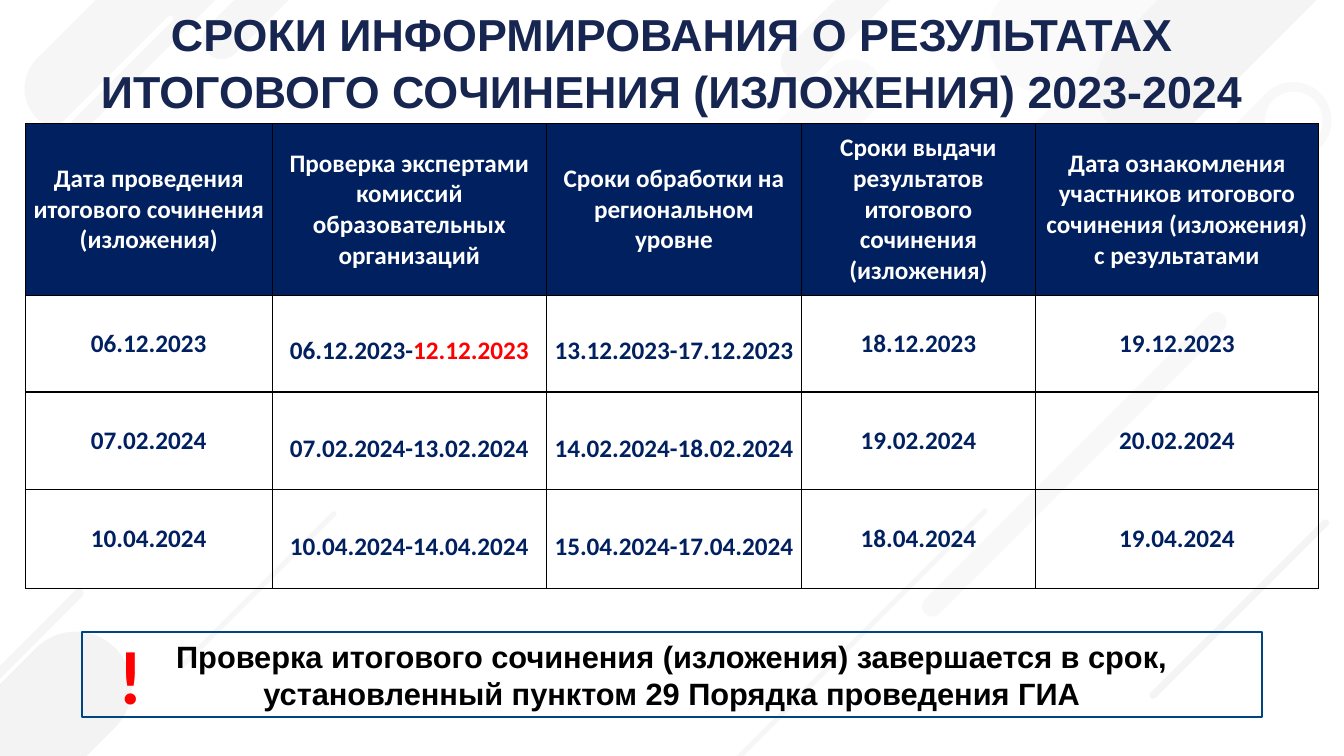
import pptx
import pptx.util
import pptx.dml.color
import pptx.enum.shapes
import pptx.enum.text
import pptx.oxml
import pptx.oxml.ns
import lxml.etree

Cm = pptx.util.Cm
Pt = pptx.util.Pt
ALIGN = pptx.enum.text.PP_ALIGN
ANCHOR = pptx.enum.text.MSO_ANCHOR
SHAPE = pptx.enum.shapes.MSO_SHAPE

COLORS = {
    "title": "172551", "navy": "002060", "red": "FF0000", "white": "FFFFFF",
    "black": "000000", "frame": "00457E", "pale": "F2F2F2", "grey": "D9D9D9",
}

TITLE = [
    "СРОКИ ИНФОРМИРОВАНИЯ О РЕЗУЛЬТАТАХ",
    "ИТОГОВОГО СОЧИНЕНИЯ (ИЗЛОЖЕНИЯ) 2023-2024",
]
HEADERS = [
    "Дата проведения итогового сочинения (изложения)",
    "Проверка экспертами комиссий образовательных организаций",
    "Сроки обработки на региональном уровне",
    "Сроки выдачи результатов итогового сочинения (изложения)",
    "Дата ознакомления участников итогового сочинения (изложения) с результатами",
]
DATES = [
    ["06.12.2023", "06.12.2023-12.12.2023", "13.12.2023-17.12.2023", "18.12.2023", "19.12.2023"],
    ["07.02.2024", "07.02.2024-13.02.2024", "14.02.2024-18.02.2024", "19.02.2024", "20.02.2024"],
    ["10.04.2024", "10.04.2024-14.04.2024", "15.04.2024-17.04.2024", "18.04.2024", "19.04.2024"],
]
HIGHLIGHT = "12.12.2023"
NOTICE = ("Проверка итогового сочинения (изложения) завершается в срок, "
          "установленный пунктом 29 Порядка проведения ГИА")

COLUMN_WIDTHS = [6.22, 6.91, 6.43, 5.89, 7.14]
ROW_HEIGHTS = [4.32, 2.44, 2.46, 2.49]

BAR, CIRCLE = SHAPE.ROUNDED_RECTANGLE, SHAPE.OVAL
DECOR = [
    (BAR, (-0.15, 15.65, 2.82, 4.65), "pale", 85),
    (BAR, (0.71, 14.35, 0.23, 3.53), "pale", 72),
    (BAR, (6.43, 12.09, 0.13, 5.56), "grey", 22),
    (BAR, (21.06, 11.28, 0.13, 10.59), "grey", 22),
    (BAR, (29.29, -7.32, 2.82, 15.6), "pale", 42),
    (BAR, (30.81, 1.73, 1.93, 4.24), "pale", 51),
    (CIRCLE, (31.88, 2.31, 1.45, 1.45), "white", 100),
    (CIRCLE, (30.28, 3.94, 1.45, 1.45), "white", 100),
    (BAR, (32.11, -10.13, 2.82, 15.6), "pale", 59),
    (BAR, (29.39, -11.4, 2.82, 15.6), "pale", 32),
    (BAR, (26.82, 6.38, 0.51, 10.64), "pale", 52),
    (BAR, (19.61, 1.04, 1.52, 4.65), "pale", 37),
    (BAR, (20.98, -2.06, 0.97, 4.65), "pale", 65),
    (BAR, (6.4, -2.62, 0.97, 4.65), "pale", 65),
    (BAR, (2.46, -3.28, 2.13, 7.34), "pale", 65),
    (BAR, (1.73, -0.64, 0.15, 7.19), "white", 100),
    (BAR, (31.14, 12.19, 0.18, 6.32), "pale", 82),
]


def rgb(name):
    return pptx.dml.color.RGBColor.from_string(COLORS[name])


def set_values(target, values):
    for name, value in values.items():
        setattr(target, name, value)


def add_text(paragraph, text, font, size, color, align=ALIGN.CENTER, spacing=None):
    set_values(paragraph, {"alignment": align, "line_spacing": spacing})
    run = paragraph.add_run()
    run.text = text
    set_values(run.font, {"name": font, "size": Pt(size), "bold": True})
    run.font.color.rgb = rgb(color)


def add_decor(slide):
    for kind, box, color, opacity in DECOR:
        shape = slide.shapes.add_shape(kind, *map(Cm, box))
        shape.shadow.inherit = False
        shape.line.fill.background()
        shape.fill.solid()
        shape.fill.fore_color.rgb = rgb(color)
        if kind == BAR:
            shape.adjustments[0] = 0.5
            shape.rotation = 45
        if opacity < 100:
            color_node = shape.element.spPr.find(".//" + pptx.oxml.ns.qn("a:srgbClr"))
            alpha = lxml.etree.SubElement(color_node, pptx.oxml.ns.qn("a:alpha"))
            alpha.set("val", str(opacity * 1000))


def add_title(slide):
    title = slide.shapes.title
    title.element.getparent().append(title.element)
    set_values(title, {"left": Cm(0), "top": Cm(0.03), "width": Cm(33.87), "height": Cm(3)})
    frame = title.text_frame
    set_values(frame, {"word_wrap": True, "vertical_anchor": ANCHOR.MIDDLE,
                       "auto_size": pptx.enum.text.MSO_AUTO_SIZE.NONE})
    for index, line in enumerate(TITLE):
        paragraph = frame.add_paragraph() if index else frame.paragraphs[0]
        add_text(paragraph, line, "Arial", 32, "title", spacing=1.05)


def add_borders(cell):
    properties = cell._tc.get_or_add_tcPr()
    for position, side in enumerate(("lnL", "lnR", "lnT", "lnB")):
        properties.insert(position, pptx.oxml.parse_xml(
            f'<a:{side} {pptx.oxml.ns.nsdecls("a")} w="12700"><a:solidFill>'
            f'<a:srgbClr val="{COLORS["black"]}"/></a:solidFill></a:{side}>'))


def add_schedule(slide):
    rows = [HEADERS] + DATES
    table = slide.shapes.add_table(
        len(rows), len(HEADERS), Cm(0.64), Cm(3.12),
        Cm(sum(COLUMN_WIDTHS)), Cm(sum(ROW_HEIGHTS))).table
    set_values(table, {"first_row": False, "horz_banding": False})
    for column, width in zip(table.columns, COLUMN_WIDTHS):
        column.width = Cm(width)
    for row_index, (row, height) in enumerate(zip(rows, ROW_HEIGHTS)):
        table.rows[row_index].height = Cm(height)
        for column_index, text in enumerate(row):
            cell = table.cell(row_index, column_index)
            set_values(cell, {
                "margin_left": Cm(0.18), "margin_right": Cm(0.18),
                "margin_top": 0, "margin_bottom": 0, "vertical_anchor": ANCHOR.MIDDLE})
            if row_index == 0:
                cell.fill.solid()
                cell.fill.fore_color.rgb = rgb("navy")
            else:
                cell.fill.background()
            add_borders(cell)
            color = "navy" if row_index else "white"
            spacing = 1.5 if row_index and column_index in (1, 2) else None
            start, highlight, _ = text.partition(HIGHLIGHT)
            for part, part_color in ((start, color), (highlight, "red")):
                if part:
                    add_text(cell.text_frame.paragraphs[0], part, "Calibri", 18,
                             part_color, spacing=spacing)


def add_notice(slide):
    box = slide.shapes.add_shape(SHAPE.RECTANGLE, Cm(2.06), Cm(15.93), Cm(29.74), Cm(2.13))
    box.shadow.inherit = False
    box.fill.background()
    box.line.color.rgb = rgb("frame")
    box.line.width = Pt(1.25)
    set_values(box.text_frame, {"word_wrap": True, "vertical_anchor": ANCHOR.MIDDLE})
    add_text(box.text_frame.paragraphs[0], NOTICE, "Arial", 22, "black")

    mark = slide.shapes.add_textbox(Cm(2.74), Cm(15.72), Cm(0.99), Cm(2.57))
    mark.text_frame.word_wrap = True
    add_text(mark.text_frame.paragraphs[0], "!", "Calibri", 54, "red", align=ALIGN.LEFT)


def main():
    presentation = pptx.Presentation()
    set_values(presentation, {"slide_width": Cm(33.87), "slide_height": Cm(19.05)})
    slide = presentation.slides.add_slide(presentation.slide_layouts[5])
    add_decor(slide)
    add_title(slide)
    add_schedule(slide)
    add_notice(slide)
    presentation.save("out.pptx")


if __name__ == "__main__":
    main()
